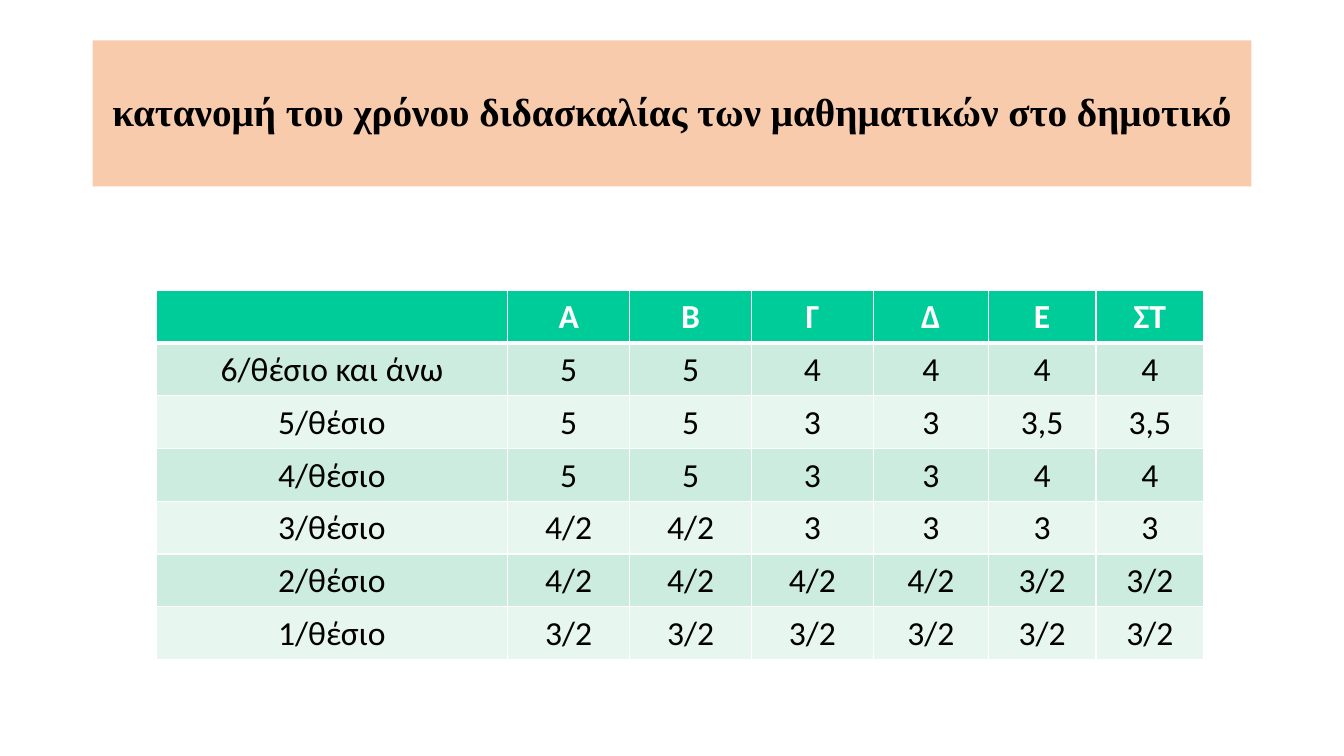
from dataclasses import dataclass

from lxml import etree
from pptx import Presentation
from pptx.dml.color import RGBColor
from pptx.enum.text import MSO_ANCHOR, MSO_AUTO_SIZE, PP_ALIGN
from pptx.oxml.ns import qn
from pptx.util import Inches, Pt

CENTER = PP_ALIGN.CENTER
MIDDLE = MSO_ANCHOR.MIDDLE
TOP = MSO_ANCHOR.TOP
NO_FIT = MSO_AUTO_SIZE.NONE
TITLE_ONLY = 5


@dataclass(frozen=True)
class Theme:
    """Colours, fonts and sizes of the slide."""
    title_fill: str = "F8CBAD"
    header_fill: str = "00CC99"
    bands: tuple = ("CBECDE", "E7F6EF")
    dark: str = "000000"
    light: str = "FFFFFF"
    title_font: str = "Times New Roman"
    table_font: str = "Calibri"
    title_size: int = 28
    table_size: int = 24
    thin: float = 0.91
    thick: float = 2.95


THEME = Theme()
TITLE = "κατανομή του χρόνου διδασκαλίας των μαθηματικών στο δημοτικό"
ROWS = [
    ["", "Α", "Β", "Γ", "Δ", "Ε", "ΣΤ"],
    ["6/θέσιο και άνω", "5", "5", "4", "4", "4", "4"],
    ["5/θέσιο", "5", "5", "3", "3", "3,5", "3,5"],
    ["4/θέσιο", "5", "5", "3", "3", "4", "4"],
    ["3/θέσιο", "4/2", "4/2", "3", "3", "3", "3"],
    ["2/θέσιο", "4/2", "4/2", "4/2", "4/2", "3/2", "3/2"],
    ["1/θέσιο", "3/2", "3/2", "3/2", "3/2", "3/2", "3/2"],
]
COL_WIDTHS = [3.49, 1.21, 1.21, 1.21, 1.14, 1.07, 1.07]
ROW_HEIGHT = 0.51


def format_paragraph(p, font, size, color, bold, spacing):
    """Centre a paragraph and set its font."""
    p.alignment = CENTER
    p.line_spacing = spacing
    p.font.name = font
    p.font.size = Pt(size)
    p.font.bold = bold
    p.font.color.rgb = RGBColor.from_string(color)


def set_borders(cell, top, bottom):
    """Draw the four borders of a cell, with top and bottom widths in points."""
    tc_pr = cell._tc.get_or_add_tcPr()
    widths = {"lnL": THEME.thin, "lnR": THEME.thin, "lnT": top, "lnB": bottom}
    for tag, width in widths.items():
        ln = etree.SubElement(tc_pr, qn(f"a:{tag}"), w=str(int(Pt(width))))
        fill = etree.SubElement(ln, qn("a:solidFill"))
        etree.SubElement(fill, qn("a:srgbClr"), val=THEME.light)


def add_title(slide):
    """Place the title on its coloured band."""
    sp = slide.shapes.title
    sp.left, sp.top = Inches(0.92), Inches(0.4)
    sp.width, sp.height = Inches(11.5), Inches(1.45)
    sp.fill.solid()
    sp.fill.fore_color.rgb = RGBColor.from_string(THEME.title_fill)
    tf = sp.text_frame
    tf.text = TITLE
    tf.word_wrap = True
    tf.auto_size = NO_FIT
    tf.vertical_anchor = MIDDLE
    format_paragraph(tf.paragraphs[0], THEME.title_font, THEME.title_size,
                     THEME.dark, True, 0.9)


def fill_cell(cell, text, row):
    """Write and format one cell according to its row."""
    header = row == 0
    set_borders(cell, THEME.thick if row == 1 else THEME.thin,
                THEME.thick if header else THEME.thin)
    color = THEME.header_fill if header else THEME.bands[(row - 1) % 2]
    cell.fill.solid()
    cell.fill.fore_color.rgb = RGBColor.from_string(color)
    cell.vertical_anchor = TOP if header else MIDDLE
    cell.text = text
    format_paragraph(cell.text_frame.paragraphs[0], THEME.table_font,
                     THEME.table_size, THEME.light if header else THEME.dark,
                     header, 1.04)


def add_hours_table(slide):
    """Add the table of teaching hours by school type and grade."""
    table = slide.shapes.add_table(
        len(ROWS), len(COL_WIDTHS), Inches(1.55), Inches(2.88),
        Inches(sum(COL_WIDTHS)), Inches(ROW_HEIGHT * len(ROWS))).table
    for column, width in zip(table.columns, COL_WIDTHS):
        column.width = Inches(width)
    for i, values in enumerate(ROWS):
        table.rows[i].height = Inches(ROW_HEIGHT)
        for j, text in enumerate(values):
            fill_cell(table.cell(i, j), text, i)


def main():
    """Build and save the slide."""
    prs = Presentation()
    prs.slide_width, prs.slide_height = Inches(13.34), Inches(7.5)
    slide = prs.slides.add_slide(prs.slide_layouts[TITLE_ONLY])
    add_title(slide)
    add_hours_table(slide)
    prs.save("out.pptx")


if __name__ == "__main__":
    main()
